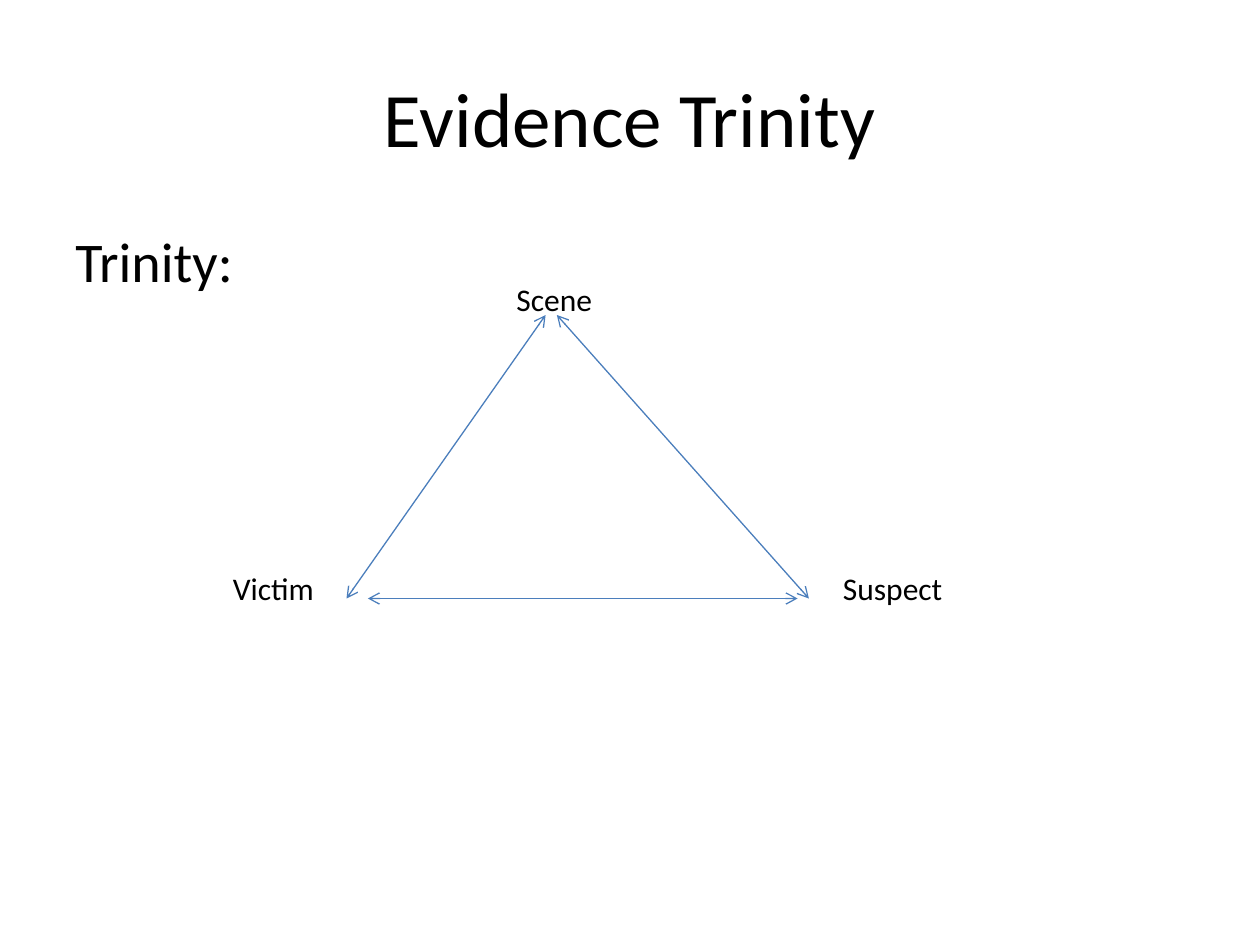
from lxml import etree
from pptx import Presentation
from pptx.dml.color import RGBColor
from pptx.enum.shapes import MSO_CONNECTOR, MSO_SHAPE
from pptx.enum.text import MSO_ANCHOR, PP_ALIGN
from pptx.oxml.ns import qn
from pptx.util import Inches, Pt

STRAIGHT = MSO_CONNECTOR.STRAIGHT
RECTANGLE = MSO_SHAPE.RECTANGLE
TOP, MIDDLE = MSO_ANCHOR.TOP, MSO_ANCHOR.MIDDLE
LEFT, CENTER = PP_ALIGN.LEFT, PP_ALIGN.CENTER

FONT = "Calibri"
BLACK, WHITE, BLUE = "000000", "FFFFFF", "4B7EBC"


def rgb(hex_color):
    return RGBColor.from_string(hex_color)


def write(shape, text, size, align, anchor):
    frame = shape.text_frame
    frame.word_wrap = True
    frame.vertical_anchor = anchor
    paragraph = frame.paragraphs[0]
    paragraph.text = text
    paragraph.alignment = align
    paragraph.font.name = FONT
    paragraph.font.size = Pt(size)
    paragraph.font.color.rgb = rgb(BLACK)


def add_text(slide, text, box, size, align=LEFT, anchor=TOP):
    textbox = slide.shapes.add_textbox(*map(Inches, box))
    write(textbox, text, size, align, anchor)


def add_label_box(slide, text, box):
    label = slide.shapes.add_shape(RECTANGLE, *map(Inches, box))
    label.shadow.inherit = False
    label.fill.solid()
    label.fill.fore_color.rgb = rgb(WHITE)
    label.line.color.rgb = rgb(WHITE)
    label.line.width = Pt(2)
    write(label, text, 18, CENTER, MIDDLE)


def add_double_arrow(slide, start, end):
    arrow = slide.shapes.add_connector(STRAIGHT, *map(Inches, start + end))
    arrow.line.color.rgb = rgb(BLUE)
    arrow.line.width = Pt(0.75)
    line = arrow.line._get_or_add_ln()
    for tag in ("a:headEnd", "a:tailEnd"):
        etree.SubElement(line, qn(tag), type="arrow")
    # An empty effect list keeps the theme shadow off
    etree.SubElement(arrow._element.spPr, qn("a:effectLst"))


def main():
    prs = Presentation()
    prs.slide_width, prs.slide_height = Inches(10), Inches(7.5)
    slide = prs.slides.add_slide(prs.slide_layouts[6])

    # Headings
    add_text(slide, "Evidence Trinity", (0.5, 0.3, 9, 1.25), 44, CENTER, MIDDLE)
    add_text(slide, "Trinity:", (0.5, 1.75, 9, 4.95), 32)

    # Sides of the triangle
    apex_y, base_y = 2.5, 4.75
    add_double_arrow(slide, (4.33, apex_y), (2.75, base_y))
    add_double_arrow(slide, (2.92, base_y), (6.33, base_y))
    add_double_arrow(slide, (6.42, base_y), (4.42, apex_y))

    # Corners of the triangle
    add_text(slide, "Scene", (4, 2.17, 1, 0.4), 18)
    add_label_box(slide, "Suspect", (6.5, 4.33, 1.17, 0.67))
    add_label_box(slide, "Victim", (1.67, 4.42, 1, 0.5))

    prs.save("out.pptx")


if __name__ == "__main__":
    main()
